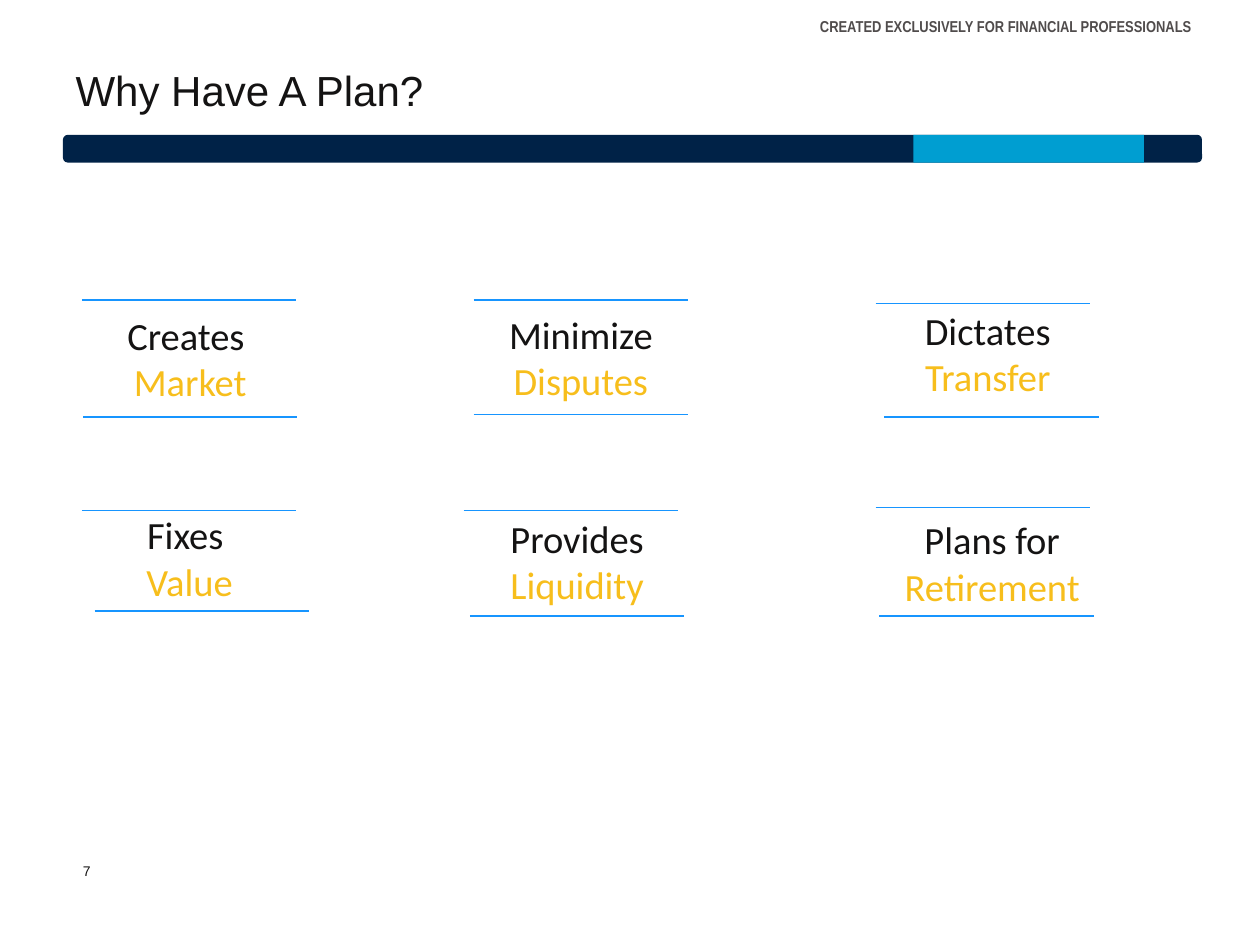
from pptx import Presentation
from pptx.dml.color import RGBColor
from pptx.enum.shapes import MSO_CONNECTOR, MSO_SHAPE
from pptx.enum.text import MSO_ANCHOR, MSO_AUTO_SIZE, PP_ALIGN
from pptx.oxml.ns import qn
from pptx.util import Inches, Pt
from lxml.etree import SubElement

COLORS = {"ink": "141313", "gold": "F7BE1C", "grey": "504C4C",
          "navy": "002247", "sky": "009ED1", "rule": "1795FF"}

FONTS = {
    "title": {"name": "Arial", "size": Pt(24), "bold": False},
    "note": {"name": "Arial Narrow", "size": Pt(9), "bold": True},
    "card": {"name": "Calibri", "size": Pt(22), "bold": False},
    "page": {"name": "Arial", "size": Pt(8), "bold": False},
}

RULE = 1.7  # length of every card rule

# Words, text box (left, top, width), top rule and bottom rule (left, top)
CARDS = [
    (("Creates ", "Market"), (0.89, 2.43, 1.24), (0.65, 2.38), (0.66, 3.31)),
    (("Minimize", "Disputes"), (3.92, 2.42, 1.38), (3.76, 2.38), (3.76, 3.29)),
    (("Dictates", "Transfer"), (7.21, 2.39, 1.26), (6.95, 2.41), (7.02, 3.31)),
    (("Fixes ", "Value"), (1.04, 4.01, 0.93), (0.65, 4.05), (0.75, 4.85)),
    (("Provides", "Liquidity"), (3.92, 4.04, 1.32), (3.68, 4.05), (3.73, 4.89)),
    (("Plans for", "Retirement"), (7.05, 4.05, 1.65), (6.95, 4.03), (6.98, 4.89)),
]


def rgb(key):
    return RGBColor.from_string(COLORS[key])


def style(font, kind, color):
    for key, value in FONTS[kind].items():
        setattr(font, key, value)
    font.color.rgb = rgb(color)


def write(shape, lines, kind, align=PP_ALIGN.LEFT, anchor=MSO_ANCHOR.TOP,
          wrap=False):
    """Fill a text shape with (words, color) lines."""
    frame = shape.text_frame
    form = {"word_wrap": wrap, "auto_size": MSO_AUTO_SIZE.NONE,
            "vertical_anchor": anchor,
            "margin_left": Inches(0.1), "margin_right": Inches(0.1),
            "margin_top": Inches(0.05), "margin_bottom": Inches(0.05)}
    for key, value in form.items():
        setattr(frame, key, value)
    for i, (words, color) in enumerate(lines):
        para = frame.add_paragraph() if i else frame.paragraphs[0]
        para.alignment = align
        run = para.add_run()
        run.text = words
        style(run.font, kind, color)


def add_text(slide, box, *args, **form):
    shape = slide.shapes.add_textbox(*map(Inches, box))
    write(shape, *args, **form)


def add_bar(slide, kind, box, color):
    bar = slide.shapes.add_shape(kind, *map(Inches, box))
    bar.shadow.inherit = False
    bar.fill.solid()
    bar.fill.fore_color.rgb = rgb(color)
    bar.line.fill.background()
    return bar


def add_rule(slide, left, top):
    ends = map(Inches, (left, top, left + RULE, top))
    rule = slide.shapes.add_connector(MSO_CONNECTOR.STRAIGHT, *ends)
    rule.line.color.rgb = rgb("rule")
    rule.line.width = Pt(0.75)
    SubElement(rule._element.spPr, qn("a:effectLst"))


def add_band(slide, left, top, width, height):
    """Rounded navy band with a sky-blue section near its right end."""
    band = add_bar(slide, MSO_SHAPE.ROUNDED_RECTANGLE,
                   (left, top, width, height), "navy")
    band.adjustments[0] = 0.17
    add_bar(slide, MSO_SHAPE.RECTANGLE,
            (left + 6.75, top, 1.83, height), "sky")


def add_head(slide, left, top, width, height):
    title = slide.shapes.title
    place = {"left": left, "top": top, "width": width, "height": height}
    for key, value in place.items():
        setattr(title, key, Inches(value))
    write(title, [("Why Have A Plan?", "ink")], "title")


def add_card(slide, words, box, upper, lower):
    """Two centred words between two rules."""
    add_rule(slide, *upper)
    add_rule(slide, *lower)
    add_text(slide, (*box, 0.84), list(zip(words, ("ink", "gold"))), "card",
             align=PP_ALIGN.CENTER)


def main():
    deck = Presentation()
    deck.slide_width, deck.slide_height = Inches(10), Inches(7.5)
    slide = deck.slides.add_slide(deck.slide_layouts.get_by_name("Title Only"))

    # Header
    add_text(slide, (6.41, 0.02, 3.57, 0.38),
             [("CREATED EXCLUSIVELY FOR FINANCIAL PROFESSIONALS", "grey")],
             "note", anchor=MSO_ANCHOR.MIDDLE)
    add_band(slide, 0.5, 1.07, 9.04, 0.22)
    add_head(slide, 0.5, 0.46, 2.99, 0.5)

    # Reasons
    for card in CARDS:
        add_card(slide, *card)

    # Page number
    add_text(slide, (0.56, 6.8, 0.27, 0.24), [("7", "ink")], "page")
    deck.save("out.pptx")


if __name__ == "__main__":
    main()
